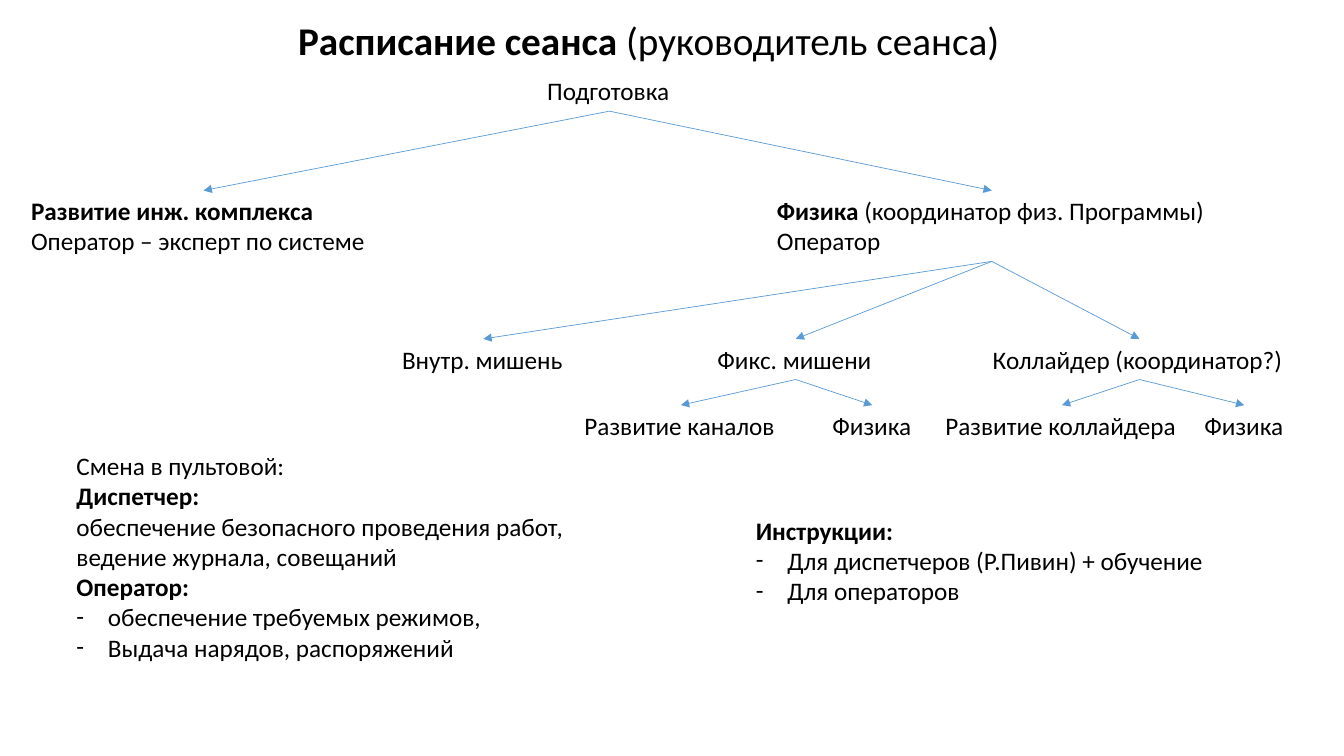
import pptx
import pptx.dml.color
import pptx.enum.dml
import pptx.enum.shapes
import pptx.enum.text
import pptx.oxml.ns
import pptx.util
from lxml import etree

Pt = pptx.util.Pt
COLORS = {"text": "000000", "arrow": "5B9BD5", "background": "FFFFFF"}
FRAME_FORMAT = {
    "word_wrap": False,
    "auto_size": pptx.enum.text.MSO_AUTO_SIZE.SHAPE_TO_FIT_TEXT,
}
LINE_HEIGHT = 21.6
INSETS = 7.4
LEVEL_TOPS = [0, 85.7, 191.7, 239]
INDENT = 22.5

TREE_NODES = {
    "preparation": (0, 368.7, 103, [[("Подготовка", False)]]),
    "engineering": (1, 0, 260.6, [
        [("Развитие инж. комплекса", True)],
        [("Оператор – эксперт по системе", False)],
    ]),
    "physics": (1, 532.8, 321.1, [
        [("Физика ", True), ("(координатор физ. Программы)", False)],
        [("Оператор", False)],
    ]),
    "internal target": (2, 265, 130.3, [[("Внутр. мишень", False)]]),
    "fixed targets": (2, 490.3, 126, [[("Фикс. мишени", False)]]),
    "collider": (2, 686.9, 223.9, [[("Коллайдер (координатор?)", False)]]),
    "channels": (3, 395.3, 151.9, [[("Развитие каналов", False)]]),
    "target physics": (3, 572.4, 71.3, [[("Физика", False)]]),
    "collider development": (3, 653.1, 180.7, [[("Развитие коллайдера", False)]]),
    "collider physics": (3, 838.1, 71.3, [[("Физика", False)]]),
}
TREE_BRANCHES = {
    "preparation": ["engineering", "physics"],
    "physics": ["internal target", "fixed targets", "collider"],
    "fixed targets": ["channels", "target physics"],
    "collider": ["collider development", "collider physics"],
}
SHIFT_LINES = [
    [("Смена в пультовой:", False)],
    [("Диспетчер:", True)],
    [("обеспечение безопасного проведения работ,", False)],
    [("ведение журнала, совещаний", False)],
    [("Оператор:", True)],
]
SHIFT_BULLETS = [
    [("обеспечение требуемых режимов,", False)],
    [("Выдача нарядов, распоряжений", False)],
]
INSTRUCTION_LINES = [[("Инструкции:", True)]]
INSTRUCTION_BULLETS = [
    [("Для диспетчеров (Р.Пивин) + обучение", False)],
    [("Для операторов", False)],
]


def apply_format(target, values):
    for name, value in values.items():
        setattr(target, name, value)


def add_dash(paragraph):
    properties = paragraph._p.get_or_add_pPr()
    properties.set("marL", str(Pt(INDENT)))
    properties.set("indent", str(-Pt(INDENT)))
    for tag, name, value in [("a:buFont", "typeface", "Calibri"), ("a:buChar", "char", "-")]:
        etree.SubElement(properties, pptx.oxml.ns.qn(tag)).set(name, value)


def add_text(slide, left, top, width, lines, bullets=(), size=18):
    line_count = len(lines) + len(bullets)
    height = line_count * LINE_HEIGHT * size / 18 + INSETS
    shape = slide.shapes.add_textbox(Pt(left), Pt(top), Pt(width), Pt(height))
    frame = shape.text_frame
    apply_format(frame, FRAME_FORMAT)
    for index, runs in enumerate([*lines, *bullets]):
        paragraph = frame.add_paragraph() if index else frame.paragraphs[0]
        if index >= len(lines):
            add_dash(paragraph)
        for text, bold in runs:
            run = paragraph.add_run()
            run.text = text
            apply_format(run.font, {"name": "Calibri", "size": Pt(size), "bold": bold})
            run.font.color.rgb = pptx.dml.color.RGBColor.from_string(COLORS["text"])
    return shape


def add_arrow(slide, parent, child):
    connector = slide.shapes.add_connector(
        pptx.enum.shapes.MSO_CONNECTOR.STRAIGHT, 0, 0, 0, 0)
    connector.begin_connect(parent, 2)
    connector.end_connect(child, 0)
    connector.line.width = Pt(0.5)
    connector.line.color.rgb = pptx.dml.color.RGBColor.from_string(COLORS["arrow"])
    line = connector.line._get_or_add_ln()
    etree.SubElement(line, pptx.oxml.ns.qn("a:tailEnd")).set("type", "triangle")
    etree.SubElement(connector._element.spPr, pptx.oxml.ns.qn("a:effectLst"))


def add_title(slide, left, top, width):
    runs = [("Расписание сеанса ", True), ("(руководитель сеанса)", False)]
    add_text(slide, left, top, width, [runs], size=28)


def add_tree(slide, left, top):
    shapes = {
        name: add_text(slide, left + offset, top + LEVEL_TOPS[level], width, lines)
        for name, (level, offset, width, lines) in TREE_NODES.items()
    }
    for parent, children in TREE_BRANCHES.items():
        for child in children:
            add_arrow(slide, shapes[parent], shapes[child])


def add_shift(slide, left, top, width):
    add_text(slide, left, top, width, SHIFT_LINES, SHIFT_BULLETS)


def add_instructions(slide, left, top, width):
    add_text(slide, left, top, width, INSTRUCTION_LINES, INSTRUCTION_BULLETS)


def main():
    presentation = pptx.Presentation()
    apply_format(presentation, {"slide_width": Pt(960), "slide_height": Pt(540)})
    slide = presentation.slides.add_slide(presentation.slide_layouts[6])
    slide.background.fill.solid()
    slide.background.fill.fore_color.rgb = pptx.dml.color.RGBColor.from_string(
        COLORS["background"])
    add_title(slide, 205.9, 7.9, 521.3)
    add_tree(slide, 15.1, 50.4)
    add_shift(slide, 47.5, 318.2, 366.5)
    add_instructions(slide, 532.8, 364.3, 337.7)
    presentation.save("out.pptx")


if __name__ == "__main__":
    main()
